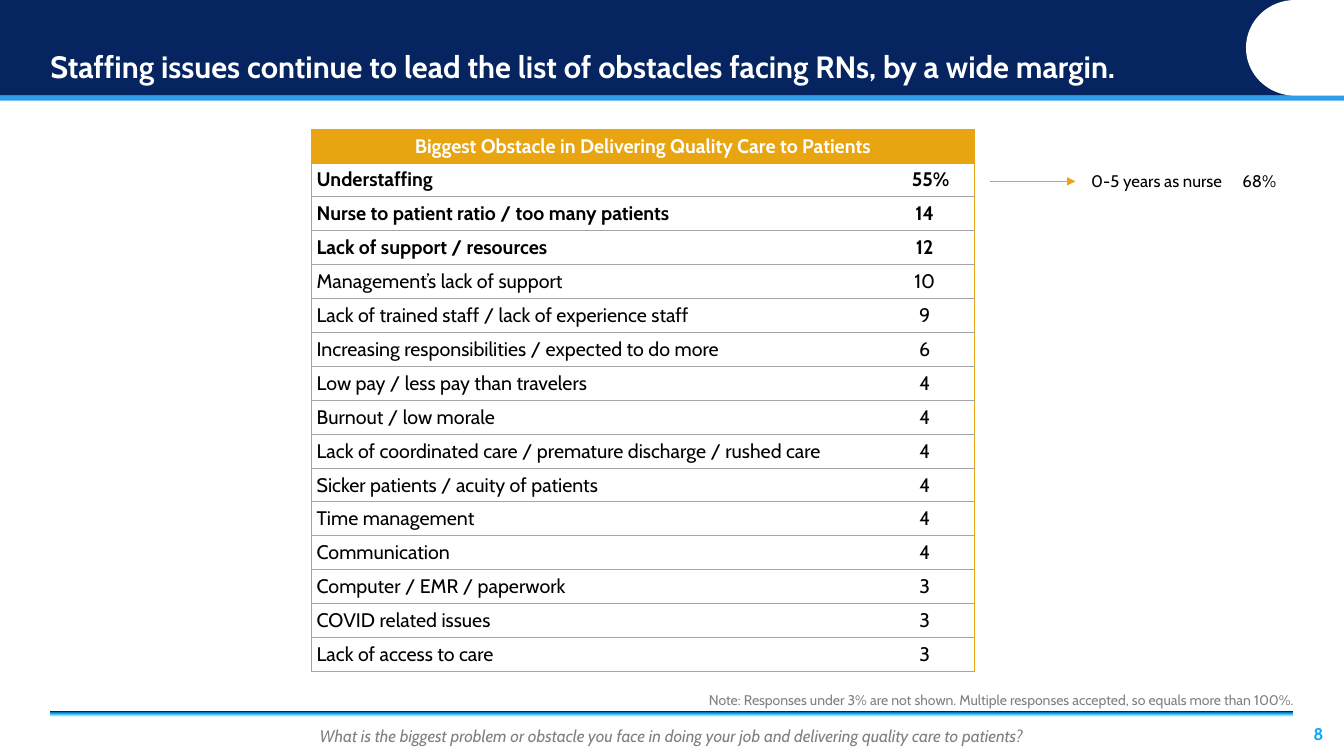
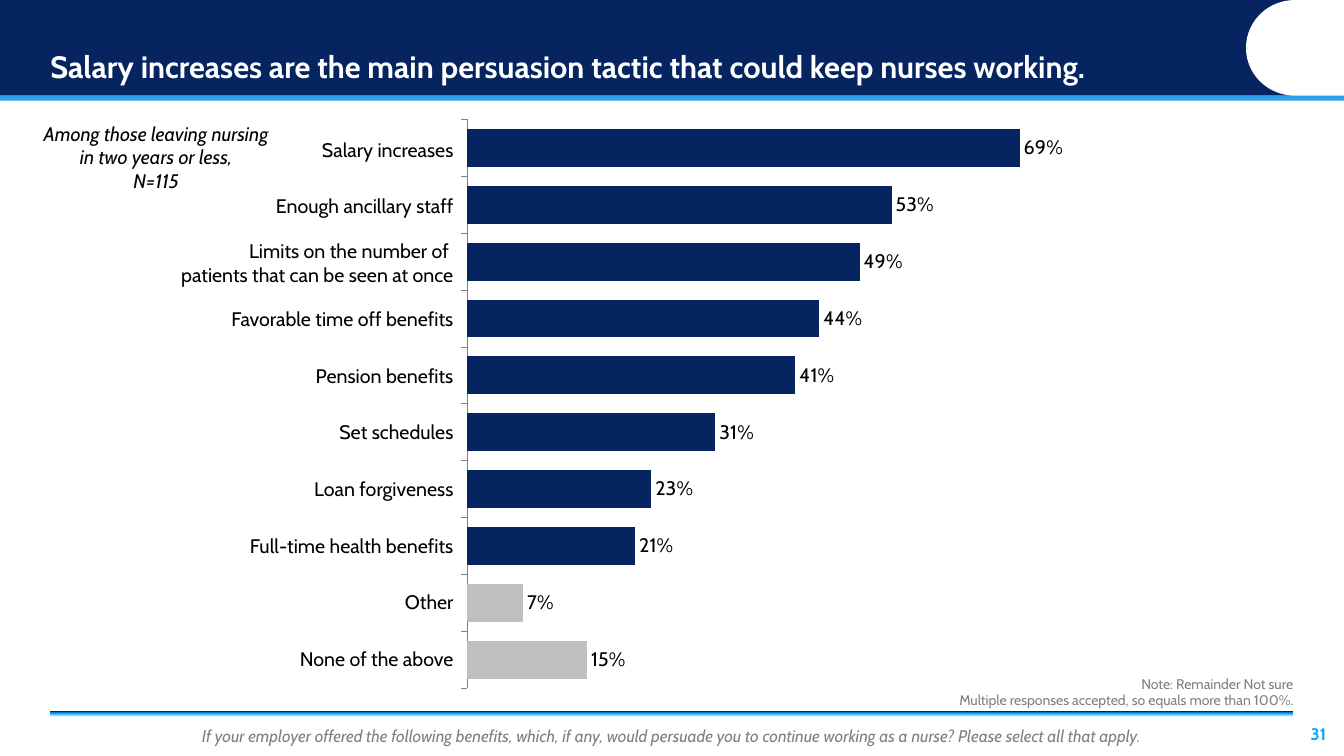
"""Build two survey slides: a table of obstacles and a chart of benefits."""
import dataclasses

import lxml.etree
import pptx
import pptx.chart.data
import pptx.dml.color
import pptx.enum.chart
import pptx.enum.shapes
import pptx.enum.text
import pptx.oxml.ns
import pptx.util

Cm = pptx.util.Cm
Pt = pptx.util.Pt
qn = pptx.oxml.ns.qn
Align = pptx.enum.text.PP_ALIGN
Anchor = pptx.enum.text.MSO_ANCHOR
Preset = pptx.enum.shapes.MSO_SHAPE


@dataclasses.dataclass(frozen=True)
class TextStyle:
    """Size, colour and weight of a kind of text."""
    size: int
    color: str
    bold: bool = False
    italic: bool = False


@dataclasses.dataclass(frozen=True)
class Theme:
    """Colours, type styles and shared measures in centimetres."""
    font: str = "Cabin"
    navy: str = "062560"
    blue: str = "2C9EEC"
    gold: str = "E8A511"
    gray: str = "808080"
    rule: str = "A6A6A6"
    muted: str = "BFBFBF"
    white: str = "FFFFFF"
    hairline: float = 0.5
    width: float = 33.87
    height: float = 19.05
    margin: float = 1.27
    content_width: float = 31.32
    footer_top: float = 17.91
    footer_height: float = 1.14
    footer_stops: tuple = ((0, "FFFFFF"), (86, "FFFFFF"), (88, "CCEDFF"),
                           (94, "00A7FF"), (100, "062560"))
    title: TextStyle = TextStyle(22, "FFFFFF", bold=True)
    heading: TextStyle = TextStyle(14, "FFFFFF", bold=True)
    body: TextStyle = TextStyle(14, "000000")
    strong: TextStyle = TextStyle(14, "000000", bold=True)
    base: TextStyle = TextStyle(14, "000000", italic=True)
    callout: TextStyle = TextStyle(12, "000000")
    question: TextStyle = TextStyle(12, "808080", italic=True)
    page: TextStyle = TextStyle(12, "00A7FF", bold=True)
    note: TextStyle = TextStyle(10, "808080")


THEME = Theme()

OBSTACLES = (
    ("Understaffing", "55%"),
    ("Nurse to patient ratio / too many patients", "14"),
    ("Lack of support / resources", "12"),
    ("Management’s lack of support", "10"),
    ("Lack of trained staff / lack of experience staff", "9"),
    ("Increasing responsibilities / expected to do more", "6"),
    ("Low pay / less pay than travelers", "4"),
    ("Burnout / low morale", "4"),
    ("Lack of coordinated care / premature discharge / rushed care", "4"),
    ("Sicker patients / acuity of patients", "4"),
    ("Time management", "4"),
    ("Communication", "4"),
    ("Computer / EMR / paperwork", "3"),
    ("COVID related issues", "3"),
    ("Lack of access to care", "3"),
)
LEADING_OBSTACLES = 3

BENEFITS = (
    ("Salary increases", 0.69),
    ("Enough ancillary staff", 0.53),
    ("Limits on the number of \npatients that can be seen at once", 0.49),
    ("Favorable time off benefits", 0.44),
    ("Pension benefits", 0.41),
    ("Set schedules", 0.31),
    ("Loan forgiveness", 0.23),
    ("Full-time health benefits", 0.21),
    ("Other", 0.07),
    ("None of the above", 0.15),
)
MUTED_BENEFITS = ("Other", "None of the above")


def rgb(color):
    """Return a colour object for a hex string."""
    return pptx.dml.color.RGBColor.from_string(color)


def box(left, top, width, height):
    """Return a frame given in centimetres as lengths."""
    return Cm(left), Cm(top), Cm(width), Cm(height)


def write(frame, paragraphs, style, align=Align.LEFT, spacing=None):
    """Fill a text frame with paragraphs of one style."""
    for index, text in enumerate(paragraphs):
        paragraph = frame.add_paragraph() if index else frame.paragraphs[0]
        paragraph.text = text
        paragraph.alignment = align
        paragraph.line_spacing = spacing
        font = paragraph.font
        font.name, font.size = THEME.font, Pt(style.size)
        font.bold, font.italic = style.bold, style.italic
        font.color.rgb = rgb(style.color)


def set_margins(target, left=0, top=0, right=0, bottom=0):
    """Set the inner margins of a text frame or table cell."""
    target.margin_left, target.margin_top = Cm(left), Cm(top)
    target.margin_right, target.margin_bottom = Cm(right), Cm(bottom)


def add_text(slide, frame, paragraphs, style, align=Align.LEFT,
             anchor=Anchor.MIDDLE, spacing=None):
    """Add a wrapping text box without margins."""
    text_frame = slide.shapes.add_textbox(*box(*frame)).text_frame
    text_frame.word_wrap = True
    text_frame.vertical_anchor = anchor
    set_margins(text_frame)
    write(text_frame, paragraphs, style, align, spacing)


def add_filled_shape(slide, preset, frame, color):
    """Add a preset shape with a plain fill and no outline."""
    shape = slide.shapes.add_shape(preset, *box(*frame))
    shape.shadow.inherit = False
    shape.line.fill.background()
    shape.fill.solid()
    shape.fill.fore_color.rgb = rgb(color)
    return shape


def set_upward_gradient(shape, stops):
    """Fill a shape with a gradient that runs from bottom to top."""
    shape.fill.gradient()
    gradient = shape._element.spPr.find(qn("a:gradFill"))
    stop_list = gradient.find(qn("a:gsLst"))
    for old_stop in list(stop_list):
        stop_list.remove(old_stop)
    for position, color in stops:
        stop = lxml.etree.SubElement(stop_list, qn("a:gs"), pos=str(position * 1000))
        lxml.etree.SubElement(stop, qn("a:srgbClr"), val=color)
    gradient.find(qn("a:lin")).set("ang", str(270 * 60000))


def add_footer(slide, question, page):
    """Add the question band and the page number."""
    frame = (THEME.margin, THEME.footer_top, THEME.content_width, THEME.footer_height)
    band = add_filled_shape(slide, Preset.RECTANGLE, frame, THEME.white)
    set_upward_gradient(band, THEME.footer_stops)
    band.text_frame.word_wrap = True
    band.text_frame.vertical_anchor = Anchor.MIDDLE
    set_margins(band.text_frame, top=0.13)
    write(band.text_frame, [question], THEME.question, Align.CENTER)
    page_left = THEME.margin + THEME.content_width
    add_text(slide, (page_left, THEME.footer_top, 1.27, THEME.footer_height),
             [page], THEME.page, Align.CENTER)


def add_survey_slide(presentation, title, question, page, notes):
    """Add a slide with header, title, notes and footer."""
    slide = presentation.slides.add_slide(presentation.slide_layouts[6])
    add_filled_shape(slide, Preset.RECTANGLE, (0, 0, THEME.width, 2.41), THEME.navy)
    add_filled_shape(slide, Preset.RECTANGLE, (0, 2.41, THEME.width, 0.13), THEME.blue)
    corner = add_filled_shape(slide, Preset.FLOWCHART_DELAY, (31.4, 0, 2.47, 2.41), THEME.white)
    corner.rotation = 180
    add_text(slide, (THEME.margin, 0.25, 29.85, 1.9), [title], THEME.title,
             anchor=Anchor.BOTTOM, spacing=0.9)
    add_footer(slide, question, page)
    notes_height = 0.43 * len(notes)
    add_text(slide, (THEME.margin, 17.86 - notes_height, THEME.content_width, notes_height),
             notes, THEME.note, Align.RIGHT, Anchor.BOTTOM)
    return slide


def add_plain_table(slide, left, top, column_widths, row_height, row_count):
    """Add a table without style, bands or header formatting."""
    frame = box(left, top, sum(column_widths), row_height * row_count)
    table = slide.shapes.add_table(row_count, len(column_widths), *frame).table
    table.first_row = table.horz_banding = False
    style = table._tbl.tblPr.find(qn("a:tableStyleId"))
    style.text = "{2D5ABB26-0587-4C30-8999-92F81FD0307C}"
    for column, width in zip(table.columns, column_widths):
        column.width = Cm(width)
    for row in table.rows:
        row.height = Cm(row_height)
    return table


def fill_cell(cell, text, style, align=Align.LEFT, margin=0, fill=None):
    """Write one table cell."""
    set_margins(cell, margin, margin, margin, margin)
    cell.vertical_anchor = Anchor.MIDDLE
    write(cell.text_frame, [text], style, align)
    if fill:
        cell.fill.solid()
        cell.fill.fore_color.rgb = rgb(fill)
    else:
        cell.fill.background()


def set_borders(cell, **colors):
    """Draw hairlines on the given sides, named L, R, T and B in that order."""
    properties = cell._tc.get_or_add_tcPr()
    for side, color in colors.items():
        line = lxml.etree.SubElement(properties, qn(f"a:ln{side}"), w=str(Pt(THEME.hairline)))
        fill = lxml.etree.SubElement(line, qn("a:solidFill"))
        lxml.etree.SubElement(fill, qn("a:srgbClr"), val=color)


def add_obstacle_table(slide):
    """Add the ranked table of obstacles."""
    margin = 0.13
    table = add_plain_table(slide, 7.85, 3.25, (14.2, 2.51), 0.85, len(OBSTACLES) + 1)
    table.cell(0, 0).merge(table.cell(0, 1))
    set_borders(table.cell(0, 0), L=THEME.gold, R=THEME.gold, T=THEME.gold)
    fill_cell(table.cell(0, 0), "Biggest Obstacle in Delivering Quality Care to Patients",
              THEME.heading, Align.CENTER, margin, THEME.gold)
    for row, (obstacle, share) in enumerate(OBSTACLES, start=1):
        style = THEME.strong if row <= LEADING_OBSTACLES else THEME.body
        name_cell, share_cell = table.cell(row, 0), table.cell(row, 1)
        set_borders(name_cell, L=THEME.rule, T=THEME.rule, B=THEME.rule)
        set_borders(share_cell, R=THEME.gold, T=THEME.rule, B=THEME.rule)
        fill_cell(name_cell, obstacle, style, margin=margin)
        fill_cell(share_cell, share, style, Align.CENTER, margin)
        if share.endswith("%"):
            share_cell.margin_left = Cm(margin + 0.3)


def add_arrow(slide, left, right, height):
    """Add a thin horizontal arrow that points right."""
    arrow = slide.shapes.add_connector(pptx.enum.shapes.MSO_CONNECTOR.STRAIGHT,
                                       Cm(left), Cm(height), Cm(right), Cm(height))
    arrow.line.color.rgb = rgb(THEME.gold)
    arrow.line.width = Pt(THEME.hairline)
    lxml.etree.SubElement(arrow.line._get_or_add_ln(), qn("a:tailEnd"), type="triangle")
    lxml.etree.SubElement(arrow._element.spPr, qn("a:effectLst"))


def set_plot_layout(chart, **shares):
    """Fix the inner plot area as shares of the chart frame."""
    plot_area = chart._chartSpace.chart.plotArea
    for old_layout in plot_area.findall(qn("c:layout")):
        plot_area.remove(old_layout)
    layout = lxml.etree.Element(qn("c:layout"))
    plot_area.insert(0, layout)
    manual = lxml.etree.SubElement(layout, qn("c:manualLayout"))
    settings = {"layoutTarget": "inner", "xMode": "edge", "yMode": "edge", **shares}
    for name, value in settings.items():
        lxml.etree.SubElement(manual, qn(f"c:{name}"), val=str(value))


def add_benefit_chart(slide):
    """Add the bar chart of benefits."""
    data = pptx.chart.data.CategoryChartData(number_format="0%")
    data.categories = [benefit for benefit, share in BENEFITS]
    data.add_series("Series 1", [share for benefit, share in BENEFITS])
    chart = slide.shapes.add_chart(pptx.enum.chart.XL_CHART_TYPE.BAR_CLUSTERED,
                                   *box(11.56, 2.72, 21.03, 14.63), data).chart
    chart.has_legend = chart.has_title = False
    chart.font.name, chart.font.size = THEME.font, Pt(THEME.body.size)
    chart.font.color.rgb = rgb(THEME.body.color)
    set_plot_layout(chart, x=0.01, y=0.02, w=0.96, h=0.98)

    categories, values = chart.category_axis, chart.value_axis
    categories.reverse_order = True
    categories.tick_label_position = pptx.enum.chart.XL_TICK_LABEL_POSITION.NONE
    categories.major_tick_mark = pptx.enum.chart.XL_TICK_MARK.OUTSIDE
    categories.format.line.color.rgb = rgb(THEME.gray)
    categories.format.line.width = Pt(THEME.hairline)
    values.minimum_scale, values.maximum_scale = 0, 1
    values.has_major_gridlines = values.visible = False

    plot = chart.plots[0]
    plot.gap_width, plot.vary_by_categories = 50, False
    plot.has_data_labels = True
    labels = plot.data_labels
    labels.show_value = True
    labels.number_format, labels.number_format_is_linked = "0%", False
    labels.position = pptx.enum.chart.XL_LABEL_POSITION.OUTSIDE_END
    series = plot.series[0]
    series.invert_if_negative = False
    series.format.fill.solid()
    series.format.fill.fore_color.rgb = rgb(THEME.navy)
    for index, (benefit, share) in enumerate(BENEFITS):
        if benefit in MUTED_BENEFITS:
            fill = series.points[index].format.fill
            fill.solid()
            fill.fore_color.rgb = rgb(THEME.muted)


def build_obstacles(presentation):
    """Build the slide on obstacles."""
    slide = add_survey_slide(
        presentation,
        "Staffing issues continue to lead the list of obstacles facing RNs, by a wide margin.",
        "What is the biggest problem or obstacle you face in doing your job and delivering "
        "quality care to patients?", "8",
        ["Note: Responses under 3% are not shown. Multiple responses accepted, "
         "so equals more than 100%."])
    add_obstacle_table(slide)
    add_arrow(slide, 24.94, 27.1, 4.57)
    callout = add_plain_table(slide, 27.5, 4.32, (3.81, 1), 0.51, 1)
    for column, text in enumerate(("0-5 years as nurse", "68%")):
        fill_cell(callout.cell(0, column), text, THEME.callout)


def build_benefits(presentation):
    """Build the slide on benefits."""
    slide = add_survey_slide(
        presentation,
        "Salary increases are the main persuasion tactic that could keep nurses working.",
        "If your employer offered the following benefits, which, if any, would persuade you "
        "to continue working as a nurse? Please select all that apply.", "31",
        ["Note: Remainder Not sure", "Multiple responses accepted, so equals more than 100%."])
    labels = add_plain_table(slide, THEME.margin, 3.07, (10.16,),
                             14.25 / len(BENEFITS), len(BENEFITS))
    for row, (benefit, share) in enumerate(BENEFITS):
        fill_cell(labels.cell(row, 0), benefit, THEME.body, Align.RIGHT)
    add_benefit_chart(slide)
    add_text(slide, (0.91, 3.07, 6.05, 1.8),
             ["Among those leaving nursing in two years or less,", "N=115"],
             THEME.base, Align.CENTER, Anchor.TOP)


def main():
    """Build and save the presentation."""
    presentation = pptx.Presentation()
    presentation.slide_width, presentation.slide_height = Cm(THEME.width), Cm(THEME.height)
    build_obstacles(presentation)
    build_benefits(presentation)
    presentation.save("out.pptx")


if __name__ == "__main__":
    main()
